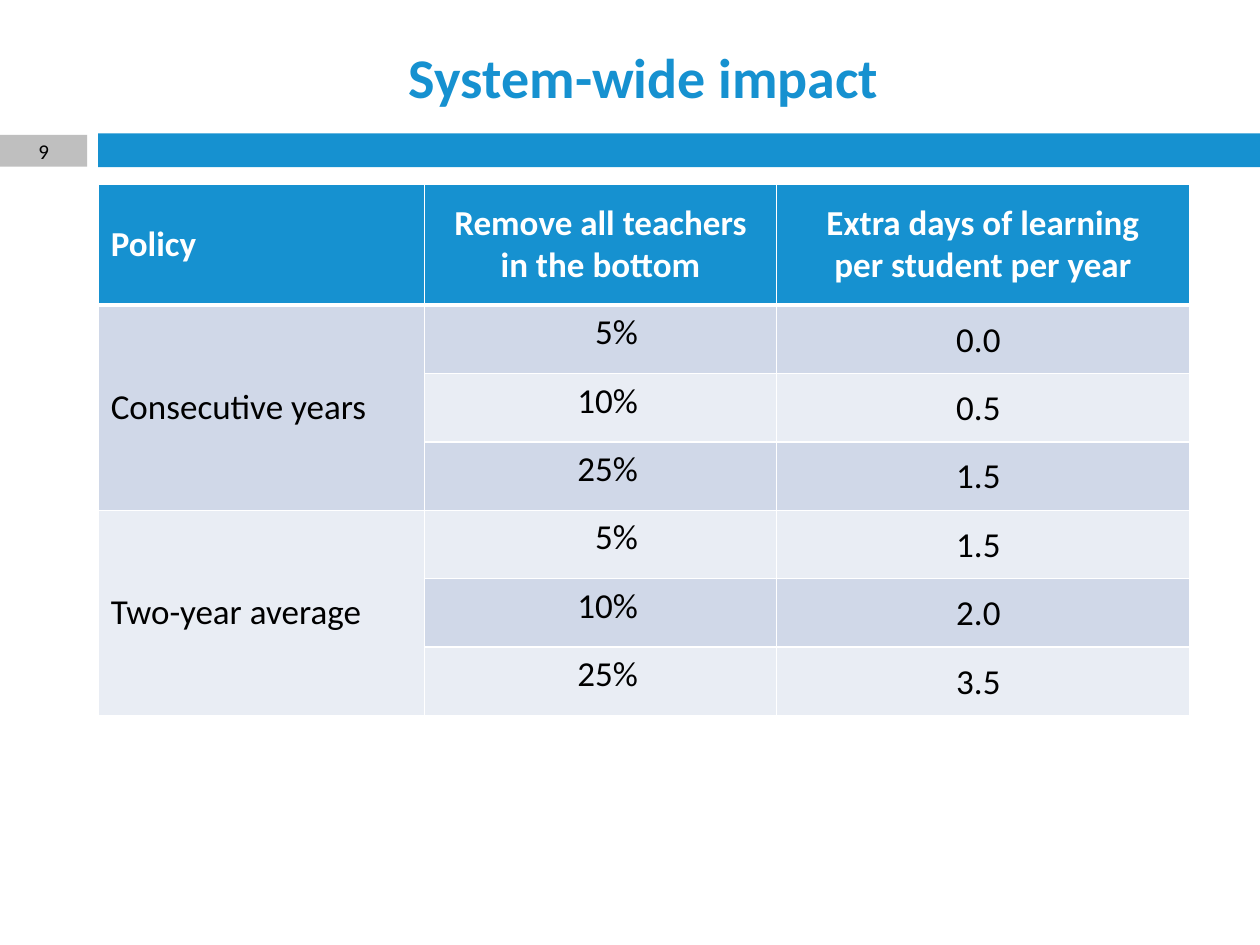
from lxml.etree import SubElement
from pptx import Presentation
from pptx.dml.color import RGBColor
from pptx.enum.shapes import MSO_SHAPE
from pptx.enum.text import MSO_ANCHOR, PP_ALIGN
from pptx.oxml.ns import qn
from pptx.util import Cm, Pt

HEX = {"blue": "1691D0", "grey": "BFBFBF", "white": "FFFFFF",
       "black": "000000", "dark": "D0D8E8", "light": "E9EDF4"}


def write(frame, text, size, color, bold=False, align=PP_ALIGN.LEFT):
    para = frame.paragraphs[0]
    para.alignment = align
    for i, line in enumerate(text.split("\n")):
        if i:
            para.add_line_break()
        run = para.add_run()
        run.text = line
        run.font.name = "Calibri"
        run.font.size = Pt(size)
        run.font.bold = bold
        run.font.color.rgb = RGBColor.from_string(HEX[color])


def paint(cell, color, base):
    # Borders come before the fill in the cell properties
    props = cell._tc.get_or_add_tcPr()
    for side, width in (("L", 1), ("R", 1), ("T", 1), ("B", base)):
        line = SubElement(props, qn("a:ln" + side), w=str(Pt(width)))
        solid = SubElement(line, qn("a:solidFill"))
        SubElement(solid, qn("a:srgbClr"), val=HEX["white"])
    cell.fill.solid()
    cell.fill.fore_color.rgb = RGBColor.from_string(HEX[color])


deck = Presentation()
deck.slide_width, deck.slide_height = Cm(25.4), Cm(19.05)
slide = deck.slides.add_slide(deck.slide_layouts[5])
left, wide = Cm(1.98), Cm(22)

# Title
title = slide.shapes.title
title.left, title.top, title.width, title.height = left, Cm(0.66), wide, Cm(1.73)
title.text_frame.vertical_anchor = MSO_ANCHOR.MIDDLE
write(title.text_frame, "System-wide impact", 32, "blue", True, PP_ALIGN.CENTER)

# Band and page number
bars = [(left, Cm(2.69), deck.slide_width - left, Cm(0.68), "blue", ""),
        (Cm(0), Cm(2.72), Cm(1.76), Cm(0.64), "grey", "9")]
for x, y, w, h, color, text in bars:
    bar = slide.shapes.add_shape(MSO_SHAPE.RECTANGLE, x, y, w, h)
    bar.shadow.inherit = False
    bar.fill.solid()
    bar.fill.fore_color.rgb = RGBColor.from_string(HEX[color])
    bar.line.fill.background()
    if text:
        frame = bar.text_frame
        frame.margin_top = frame.margin_bottom = 0
        frame.vertical_anchor = MSO_ANCHOR.MIDDLE
        write(frame, text, 12, "black", align=PP_ALIGN.CENTER)

# Table grid
heads = ["Policy", "Remove all teachers in the bottom",
         "Extra days of learning\nper student per year"]
groups = {"Consecutive years": ["0.0", "0.5", "1.5"],
          "Two-year average": ["1.5", "2.0", "3.5"]}
shares = ["5%", "10%", "25%"]
grid = slide.shapes.add_table(7, 3, left, Cm(3.71), wide, Cm(10.72)).table
for col, width in zip(grid.columns, (6.58, 7.09, 8.33)):
    col.width = Cm(width)
for i, row in enumerate(grid.rows):
    row.height = Cm(1.38 if i else 2.44)

# Header row
for i, head in enumerate(heads):
    cell = grid.cell(0, i)
    paint(cell, "blue", 3)
    cell.vertical_anchor = MSO_ANCHOR.MIDDLE
    write(cell.text_frame, head, 20, "white", True,
          PP_ALIGN.CENTER if i else PP_ALIGN.LEFT)

# Policy groups, with rows in alternating shades
for g, (name, days) in enumerate(groups.items()):
    top = 1 + g * len(shares)
    for i, (share, day) in enumerate(zip(shares, days)):
        shade = "light" if (g + i) % 2 else "dark"
        policy, cut, gain = grid.rows[top + i].cells
        paint(policy, "light" if g else "dark", 1)
        for cell, text in ((cut, share), (gain, day)):
            paint(cell, shade, 1)
            write(cell.text_frame, text, 20, "black", align=PP_ALIGN.RIGHT)
        cut.margin_right = Cm(2.79)
        gain.margin_left = gain.margin_top = Cm(0.03)
        gain.margin_right, gain.margin_bottom = Cm(3.81), 0
        gain.vertical_anchor = MSO_ANCHOR.MIDDLE
    first = grid.cell(top, 0)
    first.merge(grid.cell(top + len(shares) - 1, 0))
    first.vertical_anchor = MSO_ANCHOR.MIDDLE
    write(first.text_frame, name, 20, "black")

deck.save("out.pptx")
